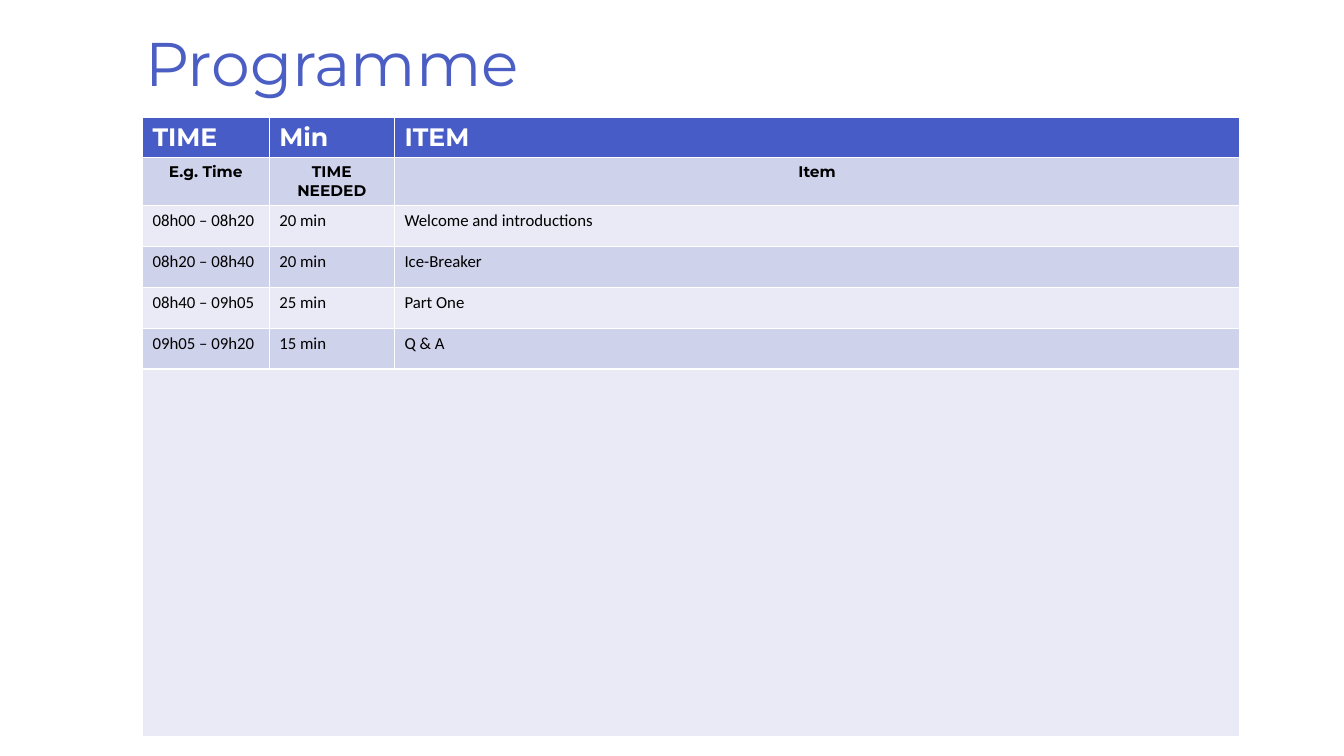
import pptx
import pptx.util
import pptx.dml.color
import pptx.enum.text

Pt = pptx.util.Pt
PP_ALIGN = pptx.enum.text.PP_ALIGN


def color(hex_code):
    return pptx.dml.color.RGBColor.from_string(hex_code)


prs = pptx.Presentation()
prs.slide_width, prs.slide_height = Pt(960), Pt(540)
s = prs.slides.add_slide(prs.slide_layouts[5])

title = s.shapes.title
title.left, title.top, title.width, title.height = Pt(96.5), Pt(3.6), Pt(784), Pt(88.5)
tf = title.text_frame
tf.text = "Programme"
tf.vertical_anchor = pptx.enum.text.MSO_ANCHOR.MIDDLE
p = tf.paragraphs[0]
p.alignment = PP_ALIGN.LEFT
p.line_spacing = 0.9
p.font.name, p.font.size = "Montserrat", Pt(44)
p.font.color.rgb = color("4B5EC4")

programme = [
    ("TIME", "Min", "ITEM"),
    ("E.g. Time", "TIME NEEDED", "Item"),
    ("08h00 – 08h20", "20 min", "Welcome and introductions"),
    ("08h20 – 08h40", "20 min", "Ice-Breaker"),
    ("08h40 – 09h05", "25 min", "Part One"),
    ("09h05 – 09h20", "15 min", "Q & A"),
    ("", "", ""),
]
# font, size, bold, text colour for the two heading rows; the rest use body
headings = [("Montserrat", 18, True, "FFFFFF"), ("Montserrat", 11, True, "000000")]
body = ("Calibri", 12, False, "000000")
last = len(programme) - 1

table = s.shapes.add_table(len(programme), 3, Pt(101.8), Pt(83.5), Pt(784), Pt(438)).table
for column, width in zip(table.columns, (90.5, 89.5, 604)):
    column.width = Pt(width)

for i, texts in enumerate(programme):
    table.rows[i].height = Pt(262.8 if i == last else 29.2)
    name, size, bold, text_color = headings[i] if i < len(headings) else body
    fill = "485CC7" if i == 0 else ("CFD2EB" if i % 2 else "E9EAF5")
    for j, text in enumerate(texts):
        cell = table.cell(i, j)
        cell.fill.solid()
        cell.fill.fore_color.rgb = color(fill)
        cell.text = text
        p = cell.text_frame.paragraphs[0]
        p.font.name, p.font.size, p.font.bold = name, Pt(size), bold
        p.font.color.rgb = color(text_color)
        if i == 1:
            p.alignment = PP_ALIGN.CENTER
            cell.margin_left = cell.margin_right = Pt(5)

table.cell(last, 0).merge(table.cell(last, 2))

prs.save("out.pptx")
